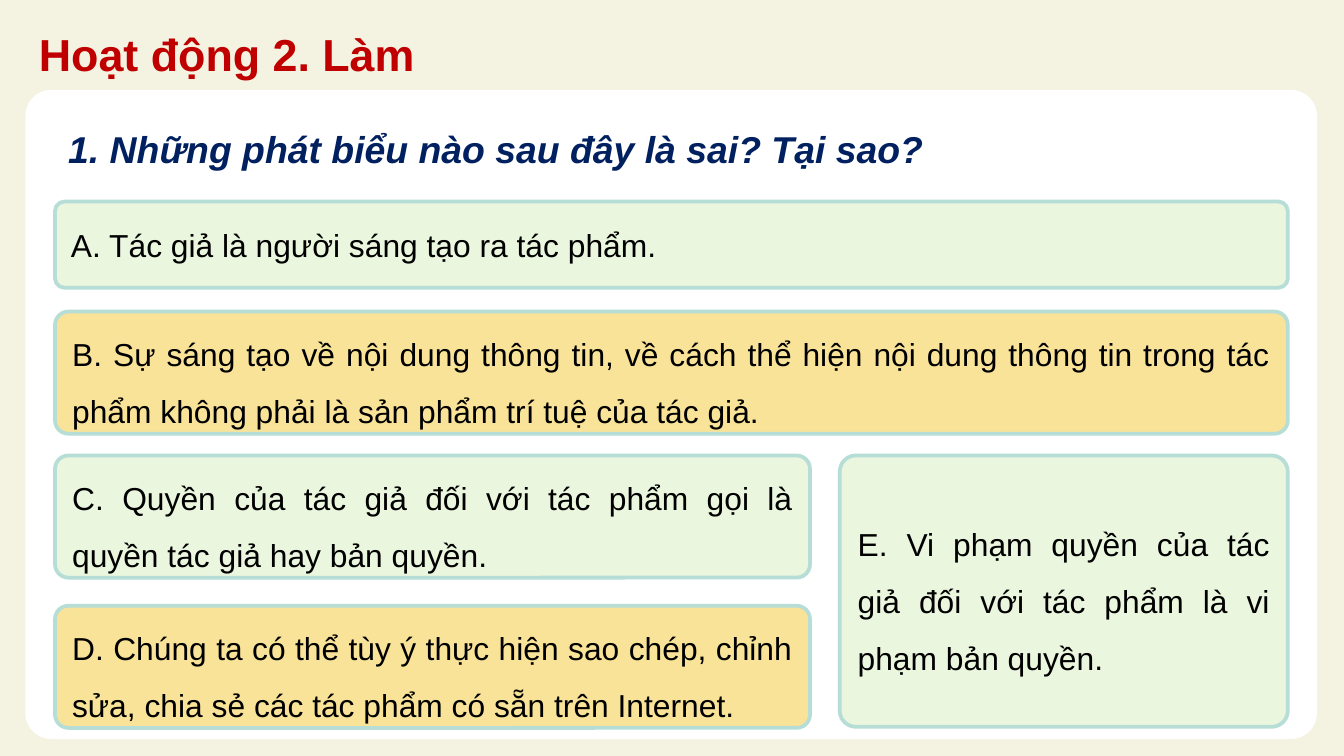
from pptx import Presentation
from pptx.dml.color import RGBColor
from pptx.enum.shapes import MSO_SHAPE as Shape
from pptx.enum.text import MSO_ANCHOR as Anchor, PP_ALIGN as Align
from pptx.util import Cm, Pt

TITLE = "Hoạt động 2. Làm"
QUESTION = "1. Những phát biểu nào sau đây là sai? Tại sao?"
PAPER, WHITE, RED, NAVY, BLACK = "F4F2E1", "FFFFFF", "C00000", "002060", "000000"
TRUE, FALSE, EDGE = "EBF6DE", "F9E398", "B6DDD6"

# Card grid in cm
LEFT, RIGHT, SPLIT, GAP = 1.04, 24.34, 15.31, 0.56
FULL, HALF = RIGHT - LEFT, SPLIT - LEFT
SIDE = SPLIT + GAP
HIGH = 2.31

# text, fill, (left, top, width, height), corner ratio, line spacing
CARDS = [
    ("A. Tác giả là người sáng tạo ra tác phẩm.",
     TRUE, (LEFT, 3.81, FULL, 1.63), 0.11, 1),
    ("B. Sự sáng tạo về nội dung thông tin, về cách thể hiện nội dung "
     "thông tin trong tác phẩm không phải là sản phẩm trí tuệ của tác giả.",
     FALSE, (LEFT, 5.89, FULL, HIGH), 0.11, 1.5),
    ("C. Quyền của tác giả đối với tác phẩm gọi là quyền tác giả "
     "hay bản quyền.",
     TRUE, (LEFT, 8.61, HALF, HIGH), 0.11, 1.5),
    ("D. Chúng ta có thể tùy ý thực hiện sao chép, chỉnh sửa, chia sẻ "
     "các tác phẩm có sẵn trên Internet.",
     FALSE, (LEFT, 11.45, HALF, HIGH), 0.11, 1.5),
    ("E. Vi phạm quyền của tác giả đối với tác phẩm là vi phạm bản quyền.",
     TRUE, (SIDE, 8.61, RIGHT - SIDE, 5.13), 0.06, 1.5),
]


def color(code):
    return RGBColor.from_string(code)


def write(shape, text, size, code, align=Align.LEFT, anchor=Anchor.TOP,
          space=1, bold=False, italic=False):
    frame = shape.text_frame
    frame.text = text
    frame.word_wrap = True
    frame.vertical_anchor = anchor
    para = frame.paragraphs[0]
    para.alignment = align
    para.line_spacing = space
    font = para.runs[0].font
    font.name, font.size = "Arial", Pt(size)
    font.bold, font.italic = bold, italic
    font.color.rgb = color(code)


def box(slide, place, fill, ratio, edge=None):
    shape = slide.shapes.add_shape(Shape.ROUNDED_RECTANGLE, *map(Cm, place))
    shape.adjustments[0] = ratio
    shape.shadow.inherit = False
    shape.fill.solid()
    shape.fill.fore_color.rgb = color(fill)
    if edge:
        shape.line.color.rgb = color(edge)
        shape.line.width = Pt(2)
    else:
        shape.line.fill.background()
    return shape


def main():
    deck = Presentation()
    deck.slide_width, deck.slide_height = Cm(25.4), Cm(14.29)
    slide = deck.slides.add_slide(deck.slide_layouts[5])
    back = slide.background.fill
    back.solid()
    back.fore_color.rgb = color(PAPER)

    title = slide.shapes.title
    title.left, title.top, title.width, title.height = map(
        Cm, (0.48, 0.38, 14.27, 1.32))
    write(title, TITLE, 24, RED, bold=True)

    box(slide, (0.48, 1.7, 24.41, 12.27), WHITE, 0.04)
    ask = slide.shapes.add_textbox(*map(Cm, (LEFT, 2.26, 19.58, 1.12)))
    write(ask, QUESTION, 20, NAVY, bold=True, italic=True)

    for text, fill, place, ratio, space in CARDS:
        card = box(slide, place, fill, ratio, EDGE)
        write(card, text, 17, BLACK, Align.JUSTIFY, Anchor.MIDDLE, space)

    deck.save("out.pptx")


if __name__ == "__main__":
    main()
